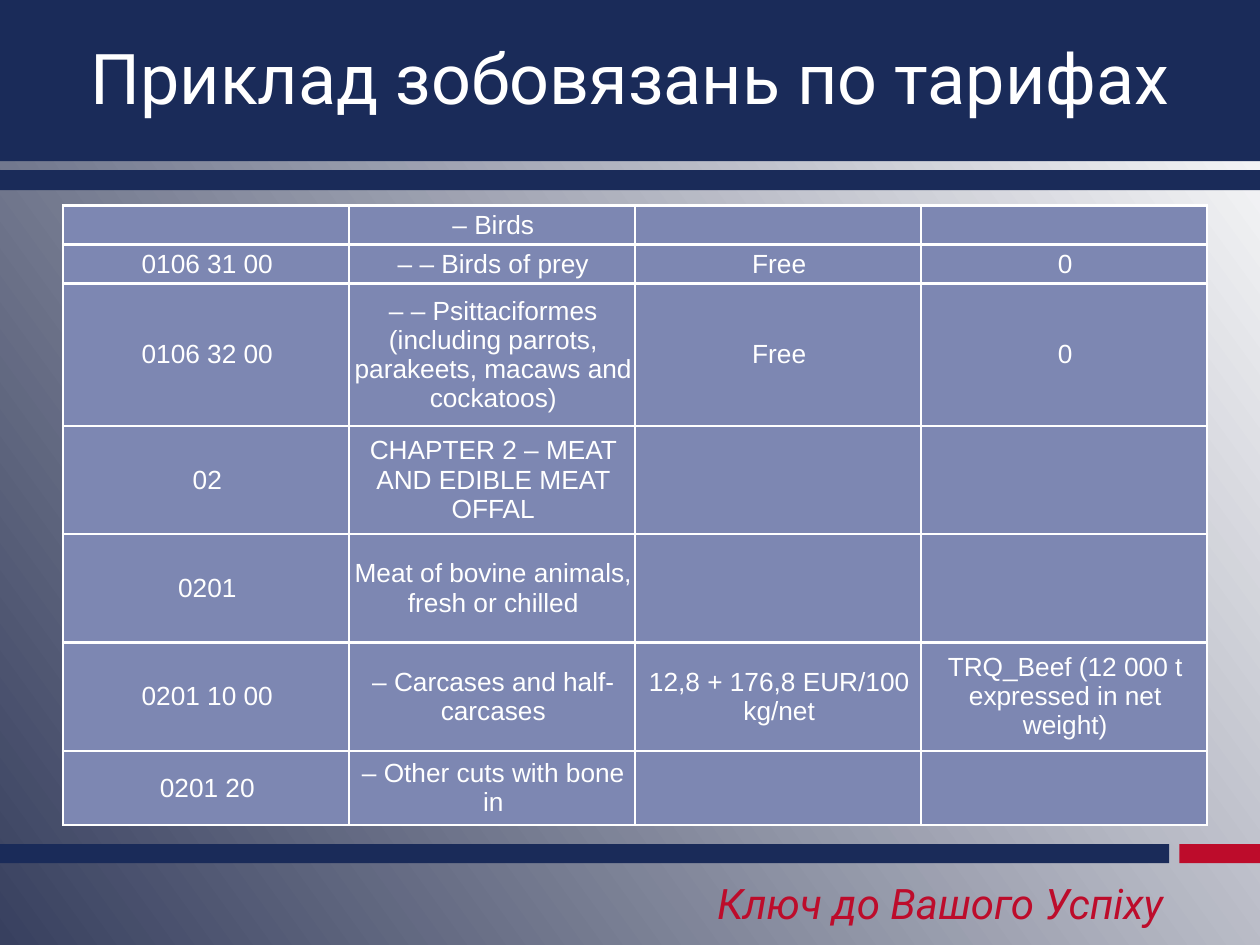
from pptx import Presentation, util as u
from pptx.dml.color import RGBColor
from pptx.enum import shapes, text
from pptx.oxml import parse_xml
from pptx.oxml.ns import nsdecls

NAVY = RGBColor(0x1A, 0x2B, 0x59)
RED = RGBColor(0xBD, 0x0C, 0x2B)
SLATE = RGBColor(0x38, 0x40, 0x5F)
LAVENDER = RGBColor(0x7D, 0x87, 0xB2)
WHITE = RGBColor(0xFF, 0xFF, 0xFF)

ROW_HEIGHTS = [0.31, 0.31, 1.13, 0.86, 0.86, 0.86, 0.59]
COLUMN_WIDTH = 2.27
TARIFFS = [
    ["", "– Birds", "", ""],
    ["0106 31 00", "– – Birds of prey", "Free", "0"],
    ["0106 32 00", "– – Psittaciformes (including parrots, parakeets, macaws and cockatoos)", "Free", "0"],
    ["02", "CHAPTER 2 – MEAT AND EDIBLE MEAT OFFAL", "", ""],
    ["0201", "Meat of bovine animals, fresh or chilled", "", ""],
    ["0201 10 00", "– Carcases and half-carcases", "12,8 + 176,8 EUR/100 kg/net",
     "TRQ_Beef (12 000 t expressed in net weight)"],
    ["0201 20", "– Other cuts with bone in", "", ""],
]


def set_background(s):
    fill = s.background.fill
    fill.gradient()
    fill.gradient_angle = 36
    for stop, color in zip(fill.gradient_stops, (SLATE, WHITE)):
        stop.color.rgb = color


def add_bar(s, left, top, width, height, color):
    sp = s.shapes.add_shape(shapes.MSO_SHAPE.RECTANGLE, u.Inches(left), u.Inches(top),
                            u.Inches(width), u.Inches(height))
    sp.shadow.inherit = False
    sp.fill.solid()
    sp.fill.fore_color.rgb = color
    sp.line.fill.background()


def add_run(p, content, font, size, color, italic=False):
    r = p.add_run()
    r.text = content
    r.font.name = font
    r.font.size = u.Pt(size)
    r.font.color.rgb = color
    r.font.italic = italic


def add_label(s, box, content, size, color, align, wrap=True, italic=False):
    sp = s.shapes.add_textbox(*(u.Inches(v) for v in box))
    tf = sp.text_frame
    tf.word_wrap = wrap
    tf.vertical_anchor = text.MSO_ANCHOR.MIDDLE
    p = tf.paragraphs[0]
    p.alignment = align
    add_run(p, content, "Roboto", size, color, italic)


def set_borders(cell):
    tc_pr = cell._tc.get_or_add_tcPr()
    for index, side in enumerate(("lnL", "lnR", "lnT", "lnB")):
        tc_pr.insert(index, parse_xml(
            f'<a:{side} {nsdecls("a")} w="{u.Pt(1.5)}"><a:solidFill>'
            f'<a:srgbClr val="{WHITE}"/></a:solidFill></a:{side}>'))


def fill_cell(cell, content):
    cell.fill.solid()
    cell.fill.fore_color.rgb = LAVENDER
    set_borders(cell)
    cell.vertical_anchor = text.MSO_ANCHOR.MIDDLE
    cell.margin_left = u.Inches(0.03)
    cell.margin_right = cell.margin_top = cell.margin_bottom = u.Inches(0.01)
    p = cell.text_frame.paragraphs[0]
    p.alignment = text.PP_ALIGN.CENTER
    if content:
        add_run(p, content, "Arial", 15, WHITE)
    else:
        p._p.get_or_add_endParaRPr().set("sz", "1500")


def add_tariff_table(s):
    columns = len(TARIFFS[0])
    table = s.shapes.add_table(len(TARIFFS), columns, u.Inches(0.5), u.Inches(1.63),
                               u.Inches(COLUMN_WIDTH * columns),
                               u.Inches(sum(ROW_HEIGHTS))).table
    table.first_row = table.horz_banding = False
    for column in table.columns:
        column.width = u.Inches(COLUMN_WIDTH)
    for i, (height, values) in enumerate(zip(ROW_HEIGHTS, TARIFFS)):
        table.rows[i].height = u.Inches(height)
        for j, value in enumerate(values):
            fill_cell(table.cell(i, j), value)


def main():
    prs = Presentation()
    prs.slide_width, prs.slide_height = u.Inches(10), u.Inches(7.5)
    s = prs.slides.add_slide(prs.slide_layouts[6])
    set_background(s)
    add_bar(s, 0, 6.7, 9.28, 0.15, NAVY)
    add_bar(s, 9.36, 6.7, 0.64, 0.15, RED)
    add_label(s, (5.4, 6.91, 3.93, 0.51), "Ключ до Вашого Успіху", 24, RED,
              text.PP_ALIGN.RIGHT, wrap=False, italic=True)
    add_bar(s, 0, 0, 10, 1.28, NAVY)
    add_bar(s, 0, 1.35, 10, 0.16, NAVY)
    add_label(s, (0.5, 0.03, 9, 1.16), "Приклад зобовязань по тарифах", 40, WHITE,
              text.PP_ALIGN.CENTER)
    add_tariff_table(s)
    prs.save("out.pptx")


if __name__ == "__main__":
    main()
